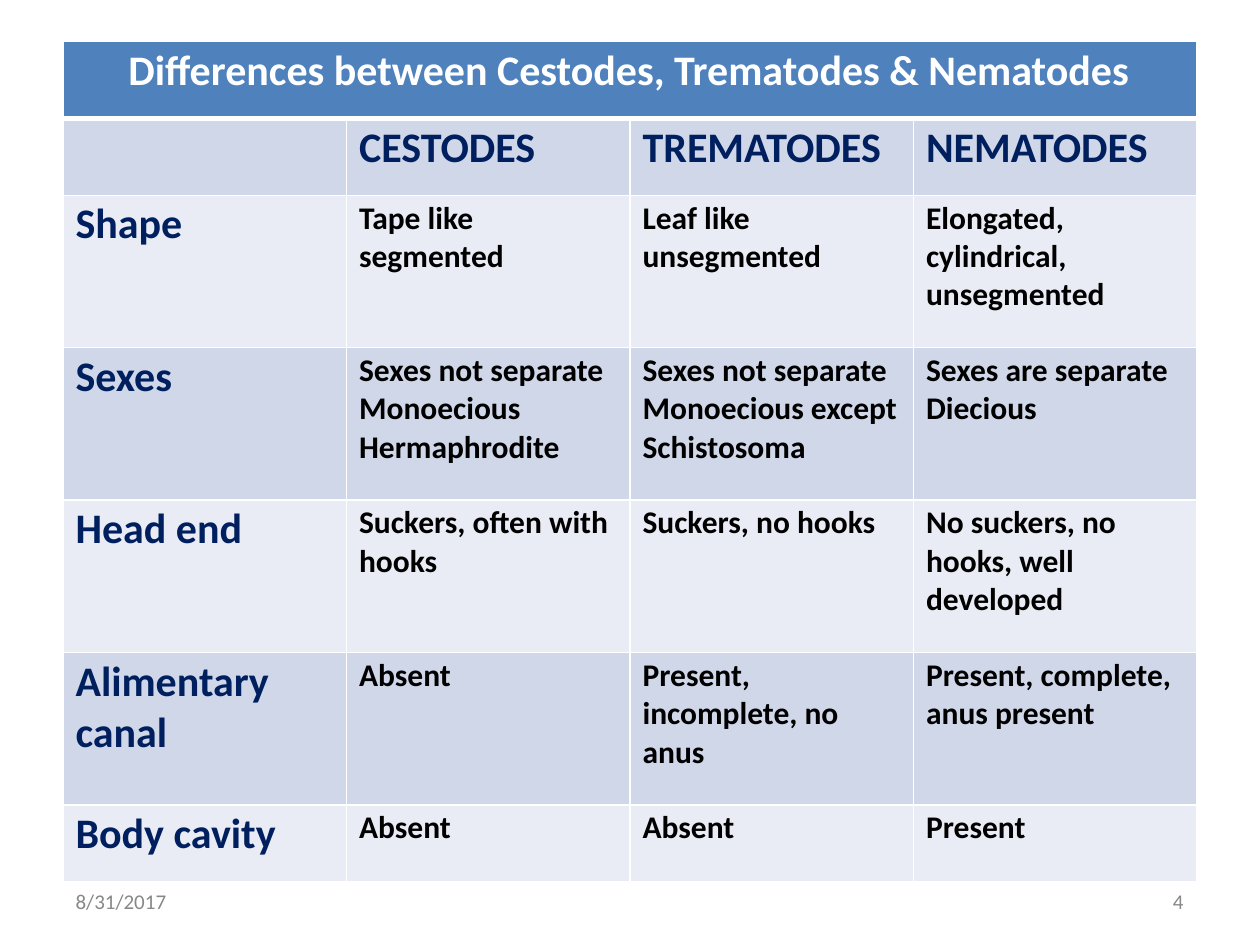
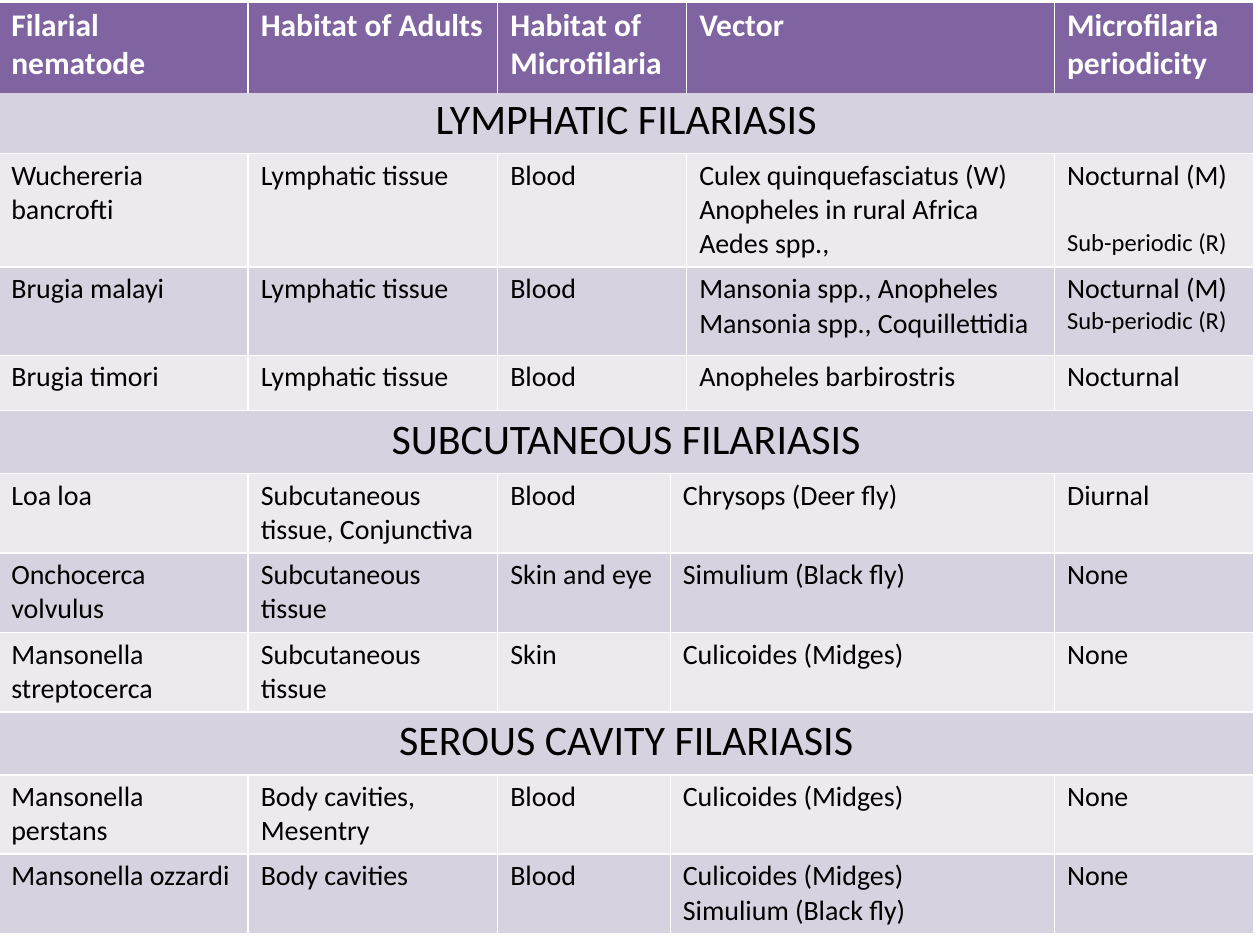
"""Build two slides of tables that compare parasitic worms."""
from dataclasses import dataclass
from lxml import etree
from pptx import Presentation
from pptx.dml.color import RGBColor
from pptx.enum.text import PP_ALIGN
from pptx.oxml.ns import qn
from pptx.util import Inches, Pt

LEFT, CENTER = PP_ALIGN.LEFT, PP_ALIGN.CENTER
BLANK = 6

WORMS = [
    ["Differences between Cestodes, Trematodes & Nematodes"],
    ["", "CESTODES", "TREMATODES", "NEMATODES"],
    ["Shape", "Tape like\nsegmented", "Leaf like\nunsegmented",
     "Elongated,/cylindrical,/unsegmented"],
    ["Sexes", "Sexes not separate/Monoecious/Hermaphrodite",
     "Sexes not separate/Monoecious except/Schistosoma",
     "Sexes are separate/Diecious"],
    ["Head end", "Suckers, often with/hooks", "Suckers, no hooks",
     "No suckers, no/hooks, well/developed"],
    ["Alimentary/canal", "Absent", "Present,/incomplete, no/anus",
     "Present, complete,/anus present"],
    ["Body cavity", "Absent", "Absent", "Present"],
]
WORM_COLS = [2.25] * 4
WORM_ROWS = [0.61] * 2 + [1.21] * 4 + [0.61]

HEADS = ["Filarial/nematode", "Habitat of Adults", "Habitat of/Microfilaria",
         "Vector", "Microfilaria/periodicity"]
GROUPS = [
    ("LYMPHATIC FILARIASIS", 4, [
        ["Wuchereria/bancrofti", "Lymphatic tissue", "Blood",
         "Culex quinquefasciatus (W)/Anopheles in rural Africa/Aedes spp.,",
         ("Nocturnal (M)", "Sub-periodic (R)", 20)],
        ["Brugia malayi", "Lymphatic tissue", "Blood",
         "Mansonia spp., Anopheles\nMansonia spp., Coquillettidia",
         ("Nocturnal (M)", "Sub-periodic (R)", 0)],
        ["Brugia timori", "Lymphatic tissue", "Blood",
         "Anopheles barbirostris", "Nocturnal"],
    ]),
    ("SUBCUTANEOUS FILARIASIS", 3, [
        ["Loa loa", "Subcutaneous\ntissue, Conjunctiva", "Blood",
         "Chrysops (Deer fly)", "Diurnal"],
        ["Onchocerca/volvulus", "Subcutaneous/tissue", "Skin and eye",
         "Simulium (Black fly)", "None"],
        ["Mansonella\nstreptocerca", "Subcutaneous\ntissue", "Skin",
         "Culicoides (Midges)", "None"],
    ]),
    ("SEROUS CAVITY FILARIASIS", 3, [
        ["Mansonella/perstans", "Body cavities,/Mesentry", "Blood",
         "Culicoides (Midges)", "None"],
        ["Mansonella ozzardi", "Body cavities", "Blood",
         "Culicoides (Midges)\nSimulium (Black fly)", "None"],
    ]),
]
HEAD_SPLIT = 4
FILARIA_COLS = [1.98, 1.98, 1.37, 0.13, 2.92, 1.58]
FILARIA_ROWS = [0.72, 0.48, 0.9, 0.7, 0.44, 0.5, 0.63, 0.63, 0.63,
                0.5, 0.63, 0.63]

FOOTERS = [("8/31/2017", 0.6, 0.9), ("4", 9.31, 0.2)]


@dataclass
class Theme:
    """Colours, font and type sizes."""
    font: str = "Calibri"
    white: str = "FFFFFF"
    black: str = "000000"
    navy: str = "001F5F"
    gray: str = "888888"
    blue: str = "4F81BC"
    blues: tuple = ("D0D7E8", "E9ECF4")
    plum: str = "8063A1"
    plums: tuple = ("D7D2DF", "ECEAEF")
    big: int = 24
    mid: int = 18
    body: int = 16
    small: int = 14
    foot: int = 12


T = Theme()


def write(par, text, size, color, bold=False):
    """Add one paragraph's text, with a line break at each slash."""
    for num, part in enumerate(text.split("/")):
        if num:
            par.add_line_break()
        run = par.add_run()
        run.text = part
        font = run.font
        font.name, font.size, font.bold = T.font, Pt(size), bold
        font.color.rgb = RGBColor.from_string(color)


def edge(cell, side, width):
    """Draw one white cell border, or hide it when the width is zero."""
    props = cell._tc.get_or_add_tcPr()
    line = etree.SubElement(props, qn("a:ln" + side), w=str(Pt(width)))
    if width:
        fill = etree.SubElement(line, qn("a:solidFill"))
        etree.SubElement(fill, qn("a:srgbClr"), val=T.white)
    else:
        etree.SubElement(line, qn("a:noFill"))


def make_grid(slide, left, top, cols, rows, joint):
    """Add a bare table whose joint is the border below its first row."""
    frame = slide.shapes.add_table(
        len(rows), len(cols), Inches(left), Inches(top),
        Inches(sum(cols)), Inches(sum(rows)))
    grid = frame.table
    grid.first_row = grid.horz_banding = False
    for col, width in zip(grid.columns, cols):
        col.width = Inches(width)
    for num, (row, height) in enumerate(zip(grid.rows, rows)):
        row.height = Inches(height)
        for cell in row.cells:
            edge(cell, "L", 1)
            edge(cell, "R", 1)
            edge(cell, "T", joint if num == 1 else 1)
            edge(cell, "B", joint if num == 0 else 1)
    return grid


def put(grid, row, start, stop, data, fill, size, color,
        bold=False, align=LEFT, inset=0.1, top=0.03):
    """Fill the cells from start up to stop as one cell."""
    cell = grid.cell(row, start)
    if stop - start > 1:
        cell.merge(grid.cell(row, stop - 1))
    cell.margin_left, cell.margin_top = Inches(inset), Inches(top)
    cell.margin_right = cell.margin_bottom = 0
    cell.fill.solid()
    cell.fill.fore_color.rgb = RGBColor.from_string(fill)
    if not data:
        return
    frame = cell.text_frame
    main, note, gap = data if isinstance(data, tuple) else (data, "", 0)
    for num, line in enumerate(main.split("\n")):
        par = frame.add_paragraph() if num else frame.paragraphs[0]
        par.alignment = align
        write(par, line, size, color, bold)
    if note:
        par = frame.add_paragraph()
        par.space_before = Pt(gap)
        write(par, note, T.small, color, bold)


def put_split(grid, row, data, split, *style, **more):
    """Fill a row of five cells, where the spare column ends before split."""
    marks = [0, 1, 2, split, 5, 6]
    for start, stop, item in zip(marks, marks[1:], data):
        put(grid, row, start, stop, item, *style, **more)


def worm_slide(deck):
    """Compare the three classes of worm."""
    slide = deck.slides.add_slide(deck.slide_layouts[BLANK])
    grid = make_grid(slide, 0.5, 0.33, WORM_COLS, WORM_ROWS, 3)
    put(grid, 0, 0, 4, WORMS[0][0], T.blue, T.big, T.white, True, inset=0.52)
    for row, items in enumerate(WORMS[1:], 1):
        for col, item in enumerate(items):
            head = row == 1 or col == 0
            size, color = (T.big, T.navy) if head else (T.mid, T.black)
            put(grid, row, col, col + 1, item, T.blues[(row - 1) % 2],
                size, color, True)
    for text, left, width in FOOTERS:
        box = slide.shapes.add_textbox(
            Inches(left), Inches(7.03), Inches(width), Inches(0.23))
        frame = box.text_frame
        frame.margin_left = frame.margin_right = frame.margin_bottom = 0
        frame.margin_top = Inches(0.02)
        par = frame.paragraphs[0]
        for num, part in enumerate(text.split("/")):
            run = par.add_run()
            run.text = "/" + part if num else part
            run.font.name, run.font.size = T.font, Pt(T.foot)
            run.font.color.rgb = RGBColor.from_string(T.gray)


def filaria_slide(deck):
    """List the filarial worms by the tissue they live in."""
    slide = deck.slides.add_slide(deck.slide_layouts[BLANK])
    grid = make_grid(slide, -0.01, 0.02, FILARIA_COLS, FILARIA_ROWS, 0)
    put_split(grid, 0, HEADS, HEAD_SPLIT, T.plum, T.mid, T.white, True)
    row = 1
    for name, split, items in GROUPS:
        put(grid, row, 0, 6, name, T.plums[0], T.big, T.black,
            align=CENTER, inset=0, top=0.01 if row == 1 else 0.03)
        for num, item in enumerate(items, 1):
            put_split(grid, row + num, item, split, T.plums[num % 2],
                      T.body, T.black, top=0.04)
        row += len(items) + 1


def main():
    """Build and save the deck."""
    deck = Presentation()
    deck.slide_width, deck.slide_height = Inches(10), Inches(7.5)
    worm_slide(deck)
    filaria_slide(deck)
    deck.save("out.pptx")


if __name__ == "__main__":
    main()
